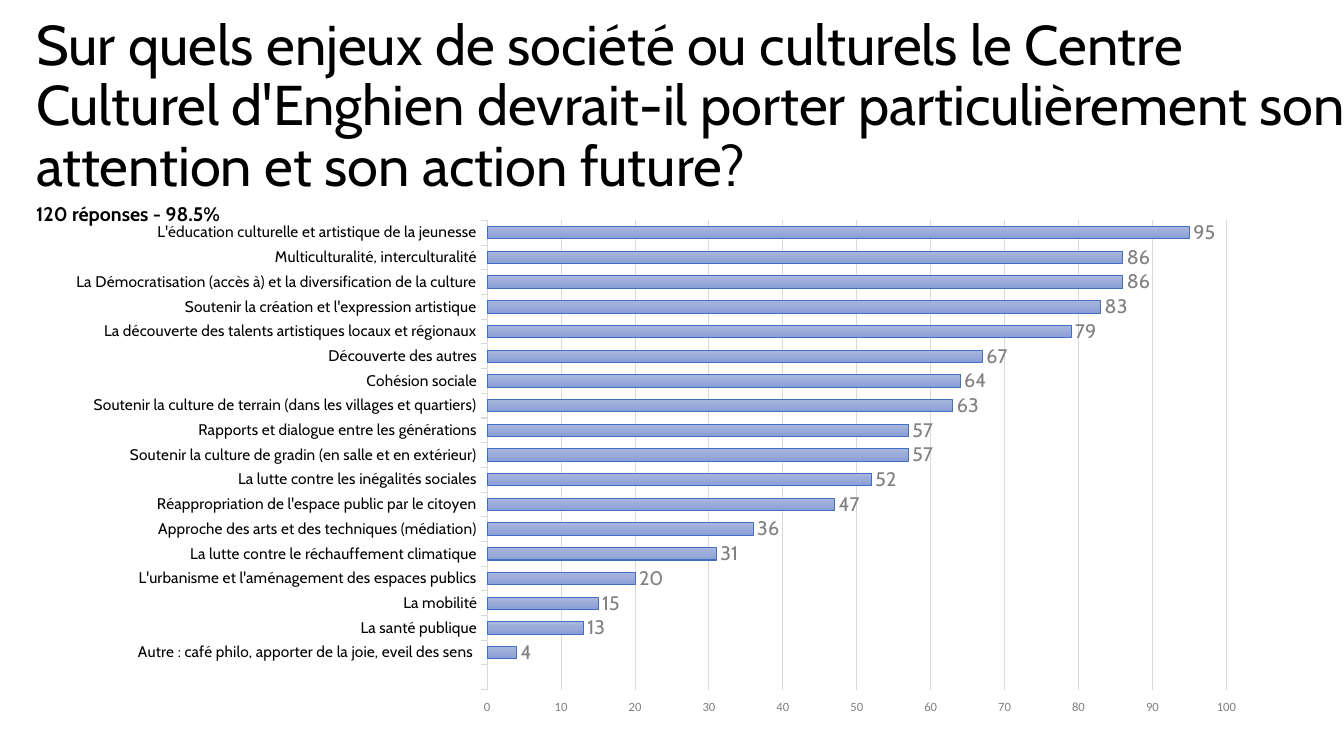
from copy import deepcopy
from typing import NamedTuple

from lxml import etree
from pptx import Presentation
from pptx.chart.data import CategoryChartData
from pptx.dml.color import RGBColor
from pptx.enum.chart import XL_CHART_TYPE, XL_LABEL_POSITION, XL_TICK_MARK
from pptx.enum.text import MSO_ANCHOR
from pptx.oxml.ns import qn
from pptx.util import Pt

PX = 9525
BAR_CLUSTERED = XL_CHART_TYPE.BAR_CLUSTERED
OUTSIDE_END = XL_LABEL_POSITION.OUTSIDE_END
TICK_OUTSIDE = XL_TICK_MARK.OUTSIDE
TICK_NONE = XL_TICK_MARK.NONE
MIDDLE = MSO_ANCHOR.MIDDLE
TOP = MSO_ANCHOR.TOP

BLACK = RGBColor(0x00, 0x00, 0x00)
GREY = RGBColor(0x80, 0x80, 0x80)
GRID = RGBColor(0xD9, 0xD9, 0xD9)
BAR_LINE = RGBColor(0x43, 0x6F, 0xC0)
BAR_STOPS = (
    RGBColor(0xA8, 0xB7, 0xDF),
    RGBColor(0x9A, 0xAB, 0xD9),
    RGBColor(0x88, 0x9E, 0xD7),
)


class Box(NamedTuple):
    left: int
    top: int
    width: int
    height: int

    def emu(self) -> list[int]:
        return [v * PX for v in self]


class Label(NamedTuple):
    text: str
    box: Box
    size: int
    bold: bool
    wrap: bool
    anchor: MSO_ANCHOR
    spacing: float


class Answer(NamedTuple):
    issue: str
    votes: int | None


LABELS = [
    Label("Sur quels enjeux de société ou culturels le Centre Culturel d'Enghien "
          "devrait-il porter particulièrement son attention et son action future?",
          Box(25, 29, 1266, 147), 40, False, True, MIDDLE, 0.9),
    Label("120 réponses - 98.5%", Box(25, 188, 230, 33), 14, True, False, TOP, 1.0),
]

CHART_BOX = Box(50, 201, 1151, 491)
PLOT_BOX = Box(464, 210, 704, 447)

ANSWERS = [
    Answer("L'éducation culturelle et artistique de la jeunesse", 95),
    Answer("Multiculturalité, interculturalité", 86),
    Answer("La Démocratisation (accès à) et la diversification de la culture", 86),
    Answer("Soutenir la création et l'expression artistique", 83),
    Answer("La découverte des talents artistiques locaux et régionaux", 79),
    Answer("Découverte des autres", 67),
    Answer("Cohésion sociale", 64),
    Answer("Soutenir la culture de terrain (dans les villages et quartiers)", 63),
    Answer("Rapports et dialogue entre les générations", 57),
    Answer("Soutenir la culture de gradin (en salle et en extérieur)", 57),
    Answer("La lutte contre les inégalités sociales", 52),
    Answer("Réappropriation de l'espace public par le citoyen", 47),
    Answer("Approche des arts et des techniques (médiation)", 36),
    Answer("La lutte contre le réchauffement climatique", 31),
    Answer("L'urbanisme et l'aménagement des espaces publics", 20),
    Answer("La mobilité", 15),
    Answer("La santé publique", 13),
    Answer("Autre : café philo, apporter de la joie, eveil des sens ", 4),
    Answer("", None),
]


def set_font(font, name: str, size: int, color: RGBColor, bold: bool = False) -> None:
    font.name = name
    font.size = Pt(size)
    font.bold = bold
    font.color.rgb = color


def set_line(line, color: RGBColor) -> None:
    line.color.rgb = color
    line.width = Pt(0.75)


def add_label(slide, label: Label) -> None:
    tf = slide.shapes.add_textbox(*label.box.emu()).text_frame
    tf.word_wrap = label.wrap
    tf.vertical_anchor = label.anchor
    p = tf.paragraphs[0]
    p.text = label.text
    p.line_spacing = label.spacing
    set_font(p.font, "Cabin", label.size, BLACK, label.bold)


def place_plot(chart, outer: Box, inner: Box) -> None:
    area = chart._chartSpace.chart.plotArea
    for old in area.findall(qn("c:layout")):
        area.remove(old)
    layout = etree.Element(qn("c:layout"))
    area.insert(0, layout)
    manual = etree.SubElement(layout, qn("c:manualLayout"))
    settings = {
        "layoutTarget": "inner",
        "xMode": "edge",
        "yMode": "edge",
        "x": (inner.left - outer.left) / outer.width,
        "y": (inner.top - outer.top) / outer.height,
        "w": inner.width / outer.width,
        "h": inner.height / outer.height,
    }
    for tag, value in settings.items():
        etree.SubElement(manual, qn(f"c:{tag}")).set("val", str(value))


def style_bars(series) -> None:
    fill = series.format.fill
    fill.gradient()
    fill.gradient_angle = 270
    stops = next(series._element.iter(qn("a:gsLst")))
    stops.insert(1, deepcopy(stops[0]))
    for i, (stop, color) in enumerate(zip(fill.gradient_stops, BAR_STOPS)):
        stop.position = i / 2
        stop.color.rgb = color
    set_line(series.format.line, BAR_LINE)


def add_answers_chart(slide, answers: list[Answer]) -> None:
    data = CategoryChartData()
    data.categories = [a.issue for a in reversed(answers)]
    data.add_series("Series 1", [a.votes for a in reversed(answers)])
    chart = slide.shapes.add_chart(BAR_CLUSTERED, *CHART_BOX.emu(), data).chart
    chart.has_legend = False
    chart.has_title = False
    set_font(chart.font, "Calibri", 10, BLACK)
    place_plot(chart, CHART_BOX, PLOT_BOX)

    issues = chart.category_axis
    issues.major_tick_mark = TICK_OUTSIDE
    issues.minor_tick_mark = TICK_NONE
    set_font(issues.tick_labels.font, "Cabin", 11, BLACK)
    set_line(issues.format.line, GRID)

    votes = chart.value_axis
    votes.minimum_scale = 0
    votes.maximum_scale = 100
    votes.major_unit = 10
    votes.major_tick_mark = TICK_OUTSIDE
    votes.minor_tick_mark = TICK_NONE
    votes.format.line.fill.background()
    set_font(votes.tick_labels.font, "Calibri", 9, GREY)
    set_line(votes.major_gridlines.format.line, GRID)

    plot = chart.plots[0]
    plot.gap_width = 100
    plot.vary_by_categories = False
    plot.has_data_labels = True
    labels = plot.data_labels
    labels.show_value = True
    labels.position = OUTSIDE_END
    set_font(labels.font, "Cabin", 14, GREY)
    style_bars(plot.series[0])


def main() -> None:
    prs = Presentation()
    prs.slide_width = 1280 * PX
    prs.slide_height = 720 * PX
    s = prs.slides.add_slide(prs.slide_layouts[6])
    add_answers_chart(s, ANSWERS)
    for label in LABELS:
        add_label(s, label)
    prs.save("out.pptx")


if __name__ == "__main__":
    main()
